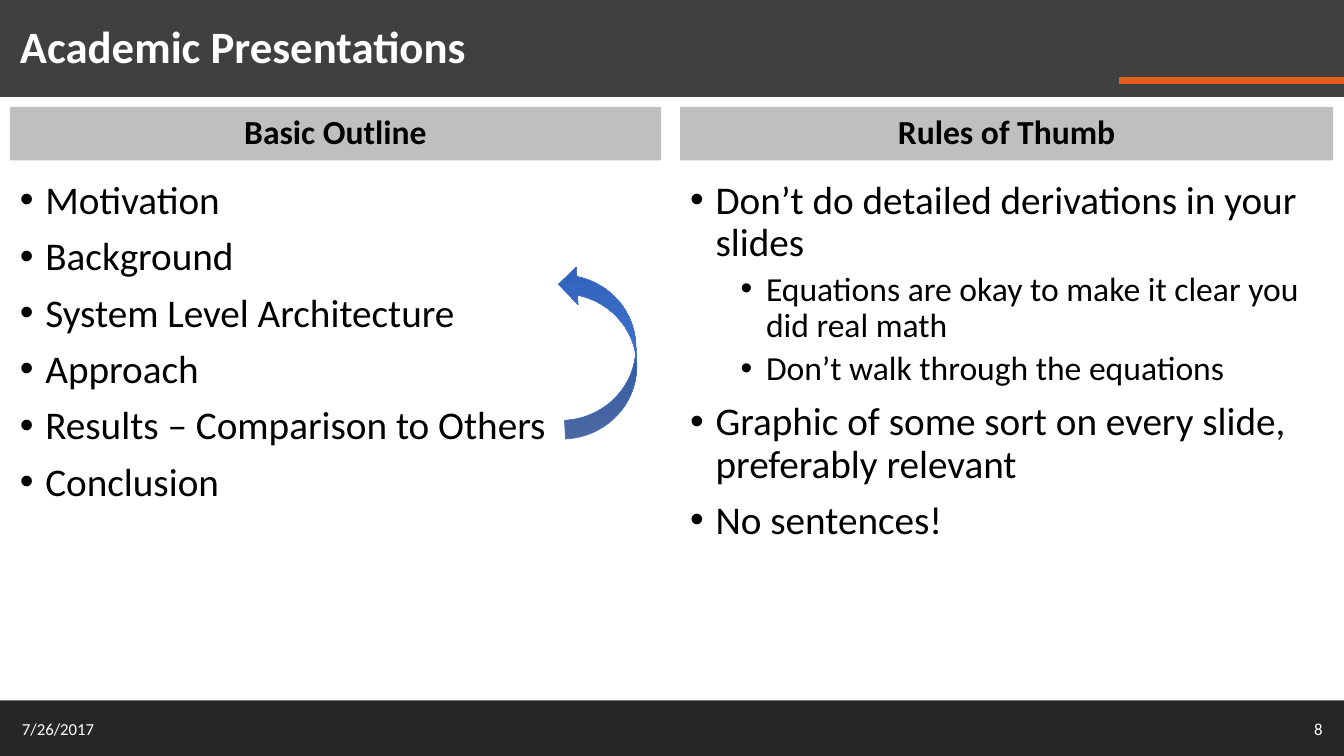
from lxml.etree import SubElement
from pptx import Presentation
from pptx.dml.color import RGBColor
from pptx.enum.shapes import MSO_CONNECTOR, MSO_SHAPE
from pptx.enum.text import MSO_ANCHOR, MSO_AUTO_SIZE, PP_ALIGN
from pptx.oxml.ns import qn
from pptx.util import Cm, Pt

COLORS = {
    "white": "FFFFFF", "black": "000000", "header": "404040", "footer": "262626",
    "accent": "E45F1C", "band": "BFBFBF", "arrow": "4472C4",
    "arrow_start": "6183CB", "arrow_middle": "3E70CA", "arrow_end": "3062BB",
}
WIDTH, HEIGHT = 33.87, 19.05
BULLET_STYLES = [(28, 10, 0.64), (24, 5, 1.91)]
HANGING = 0.64


class SlideBuilder:
    font = "Calibri"

    def __init__(self, s):
        self.s = s

    def color(self, name):
        return RGBColor.from_string(COLORS[name])

    def place(self, sp, left, top, width, height):
        sp.left, sp.top, sp.width, sp.height = Cm(left), Cm(top), Cm(width), Cm(height)

    def send_to_back(self, sp):
        sp.element.getparent().insert(2, sp.element)

    def run(self, p, text, size, color, bold=False):
        r = p.add_run()
        r.text = text
        r.font.name, r.font.size, r.font.bold = self.font, Pt(size), bold
        r.font.color.rgb = self.color(color)

    def frame(self, sp, anchor):
        tf = sp.text_frame
        tf.word_wrap = True
        tf.auto_size = MSO_AUTO_SIZE.NONE
        tf.vertical_anchor = anchor
        return tf

    def line_of_text(self, sp, text, size, color, align=PP_ALIGN.LEFT, bold=False, spacing=1.0):
        p = self.frame(sp, MSO_ANCHOR.MIDDLE).paragraphs[0]
        p.alignment, p.line_spacing, p.space_before = align, spacing, Pt(0)
        self.run(p, text, size, color, bold)

    def bar(self, top, height, color):
        sp = self.s.shapes.add_shape(MSO_SHAPE.RECTANGLE, 0, Cm(top), Cm(WIDTH), Cm(height))
        sp.shadow.inherit = False
        sp.fill.solid()
        sp.fill.fore_color.rgb = self.color(color)
        sp.line.fill.background()
        self.send_to_back(sp)

    def rule(self, left, right, y, color, weight):
        line = self.s.shapes.add_connector(MSO_CONNECTOR.STRAIGHT, Cm(left), Cm(y), Cm(right), Cm(y))
        line.line.color.rgb = self.color(color)
        line.line.width = Pt(weight)
        SubElement(line.element.spPr, qn("a:effectLst"))
        self.send_to_back(line)

    def title(self, text, *box):
        sp = self.s.shapes.title
        self.place(sp, *box)
        self.line_of_text(sp, text, 32, "white", bold=True, spacing=0.9)

    def heading(self, idx, text, *box):
        sp = self.s.placeholders[idx]
        self.place(sp, *box)
        sp.fill.solid()
        sp.fill.fore_color.rgb = self.color("band")
        self.line_of_text(sp, text, 24, "black", PP_ALIGN.CENTER, True, 0.9)

    def bullets(self, idx, items, *box):
        sp = self.s.placeholders[idx]
        self.place(sp, *box)
        tf = self.frame(sp, MSO_ANCHOR.TOP)
        for i, (level, text) in enumerate(items):
            size, before, indent = BULLET_STYLES[level]
            p = tf.add_paragraph() if i else tf.paragraphs[0]
            p.level, p.line_spacing = level, 0.9
            p.space_before = Pt(before if i else 0)
            pPr = p._p.get_or_add_pPr()
            pPr.set("marL", str(Cm(indent)))
            pPr.set("indent", str(-Cm(HANGING)))
            SubElement(pPr, qn("a:buFont"), typeface="Arial")
            SubElement(pPr, qn("a:buChar"), char="•")
            self.run(p, text, size, "black")

    def footer_text(self, text, align, *box):
        sp = self.s.shapes.add_textbox(*map(Cm, box))
        self.line_of_text(sp, text, 12, "white", align)

    def curved_arrow(self, rotation, *box):
        sp = self.s.shapes.add_shape(MSO_SHAPE.CURVED_RIGHT_ARROW, *map(Cm, box))
        sp.rotation = rotation
        sp.shadow.inherit = False
        sp.fill.gradient()
        sp.fill.gradient_angle = 270
        stops = sp.element.spPr.find(".//" + qn("a:gsLst"))
        stops.clear()
        for position, name in ((0, "arrow_start"), (50, "arrow_middle"), (100, "arrow_end")):
            stop = SubElement(stops, qn("a:gs"), pos=str(position * 1000))
            SubElement(stop, qn("a:srgbClr"), val=COLORS[name])
        sp.line.color.rgb = self.color("arrow")
        sp.line.width = Pt(0.5)


def main():
    prs = Presentation()
    prs.slide_width, prs.slide_height = Cm(WIDTH), Cm(HEIGHT)
    slide = SlideBuilder(prs.slides.add_slide(prs.slide_layouts[4]))

    slide.rule(28.2, WIDTH, 2.03, "accent", 5)
    slide.bar(0, 2.44, "header")
    slide.bar(17.65, 1.4, "footer")
    slide.title("Academic Presentations", 0.25, 0.18, 27.64, 2.13)

    outline = [(0, text) for text in (
        "Motivation", "Background", "System Level Architecture", "Approach",
        "Results – Comparison to Others", "Conclusion")]
    rules = [
        (0, "Don’t do detailed derivations in your slides"),
        (1, "Equations are okay to make it clear you did real math"),
        (1, "Don’t walk through the equations"),
        (0, "Graphic of some sort on every slide, preferably relevant"),
        (0, "No sentences!"),
    ]
    columns = [("Basic Outline", outline, 0.25, 16.41), ("Rules of Thumb", rules, 17.14, 16.46)]
    for i, (heading, items, left, width) in enumerate(columns):
        slide.heading(2 * i + 1, heading, left, 2.69, width, 1.35)
        slide.bullets(2 * i + 2, items, left, 4.42, width, 12.78)

    slide.footer_text("7/26/2017", PP_ALIGN.LEFT, 0.3, 17.86, 7.62, 1.02)
    slide.footer_text("8", PP_ALIGN.RIGHT, 25.96, 17.86, 7.62, 1.02)
    slide.curved_arrow(177.4, 14.15, 6.65, 1.88, 4.37)
    prs.save("out.pptx")


if __name__ == "__main__":
    main()
